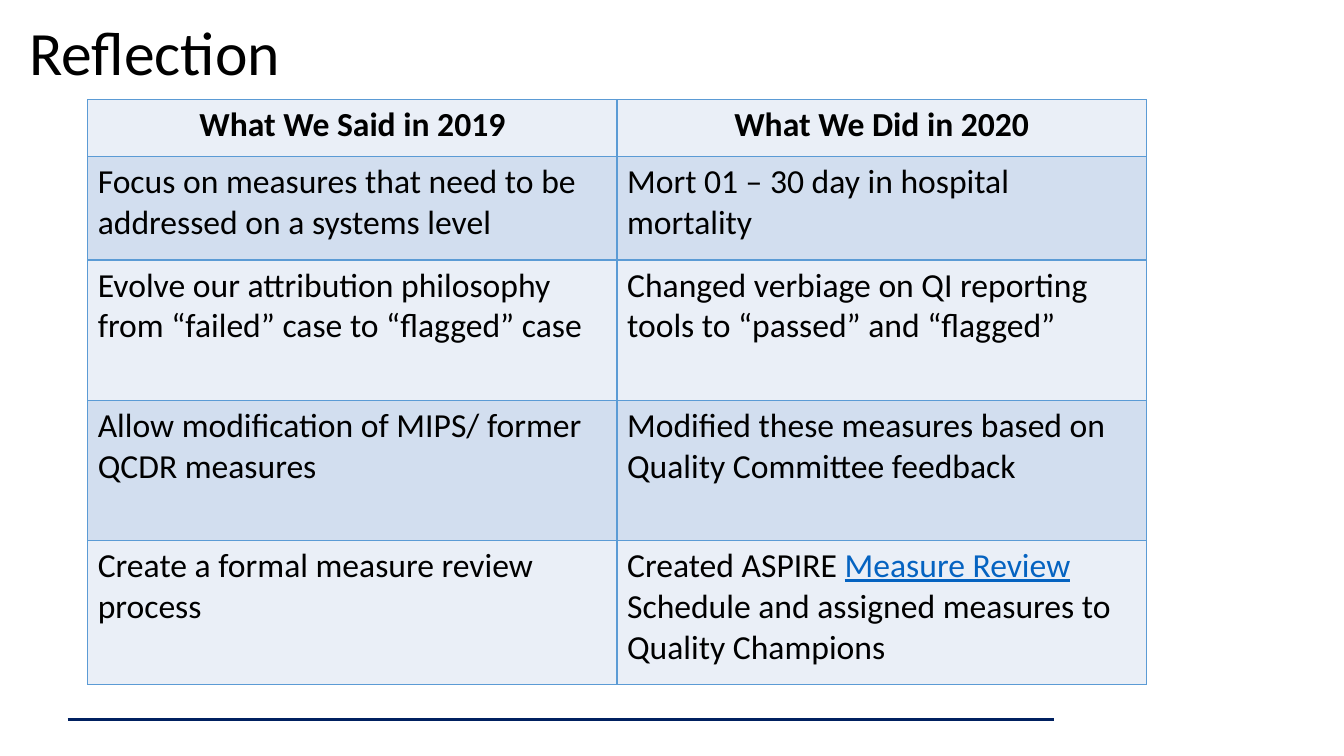
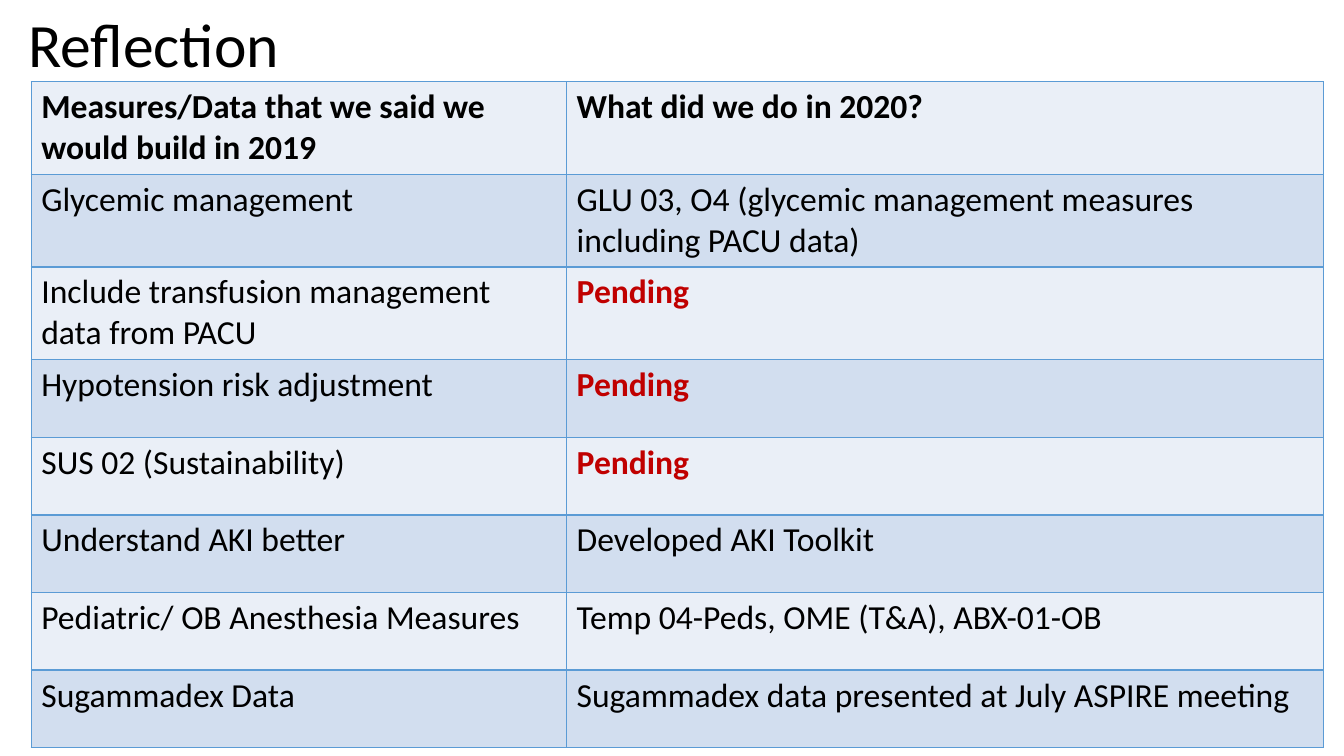
from lxml import etree
from pptx import Presentation
from pptx import util as u
from pptx.dml.color import RGBColor
from pptx.enum import shapes, text
from pptx.oxml import ns

FONT = "Calibri"
BLACK, NAVY, LINK, RED = "000000", "002060", "0563C1", "C00000"
BORDER = "5B9BD5"
BANDS = ("EAEFF7", "D2DEEF")
PENDING = [("Pending", {"color": RED, "bold": True})]

REFLECTION_ROWS = [
    ("What We Said in 2019", "What We Did in 2020"),
    ("Focus on measures that need to be addressed on a systems level",
     "Mort 01 – 30 day in hospital mortality"),
    ("Evolve our attribution philosophy from “failed” case to “flagged” case",
     "Changed verbiage on QI reporting tools to “passed” and “flagged”"),
    ("Allow modification of MIPS/ former QCDR measures",
     "Modified these measures based on Quality Committee feedback"),
    ("Create a formal measure review process",
     [("Created ASPIRE ", {}),
      ("Measure Review ", {"color": LINK, "underline": True}),
      ("Schedule and assigned measures to Quality Champions", {})]),
]
MEASURE_ROWS = [
    ("Measures/Data that we said we would build in 2019", "What did we do in 2020?"),
    ("Glycemic management",
     "GLU 03, O4 (glycemic management measures including PACU data)"),
    ("Include transfusion management data from PACU", PENDING),
    ("Hypotension risk adjustment", PENDING),
    ("SUS 02 (Sustainability)", PENDING),
    ("Understand AKI better", "Developed AKI Toolkit"),
    ("Pediatric/ OB Anesthesia Measures", "Temp 04-Peds, OME (T&A), ABX-01-OB"),
    ("Sugammadex Data", "Sugammadex data presented at July ASPIRE meeting"),
]


def rgb(value):
    return RGBColor.from_string(value)


def add_run(paragraph, words, size, color=BLACK, bold=False, underline=False):
    run = paragraph.add_run()
    run.text = words
    font = run.font
    font.name, font.size = FONT, u.Pt(size)
    font.bold, font.underline = bold, underline
    font.color.rgb = rgb(color)


def add_footer_rule(slide, layout):
    """Draw the rule and hand it to the layout, so every slide shows it."""
    rule = slide.shapes.add_connector(
        shapes.MSO_CONNECTOR.STRAIGHT,
        u.Inches(0.67), u.Inches(7.14), u.Inches(10.45), u.Inches(7.14))
    rule.line.color.rgb = rgb(NAVY)
    rule.line.width = u.Pt(2)
    etree.SubElement(rule.element.spPr, ns.qn("a:effectLst"))
    layout.shapes.element.append(rule.element)


def set_title(slide, words, box):
    title = slide.shapes.title
    title.left, title.top, title.width, title.height = map(u.Inches, box)
    frame = title.text_frame
    frame.word_wrap = True
    frame.auto_size = text.MSO_AUTO_SIZE.NONE
    frame.vertical_anchor = text.MSO_ANCHOR.MIDDLE
    paragraph = frame.paragraphs[0]
    paragraph.alignment = text.PP_ALIGN.LEFT
    paragraph.line_spacing = 0.9
    add_run(paragraph, words, 44)


def set_borders(cell):
    properties = cell._tc.get_or_add_tcPr()
    for index, side in enumerate(("lnL", "lnR", "lnT", "lnB")):
        line = etree.Element(ns.qn(f"a:{side}"), w=str(u.Pt(1)))
        fill = etree.SubElement(line, ns.qn("a:solidFill"))
        etree.SubElement(fill, ns.qn("a:srgbClr"), val=BORDER)
        properties.insert(index, line)


def add_banded_table(slide, left, top, widths, heights, rows, header_alignment):
    frame = slide.shapes.add_table(
        len(rows), len(widths), u.Inches(left), u.Inches(top),
        u.Inches(sum(widths)), u.Inches(sum(heights)))
    table = frame.table
    table.first_row = table.horz_banding = False
    for column, width in zip(table.columns, widths):
        column.width = u.Inches(width)
    for row_index, (row, height, contents) in enumerate(zip(table.rows, heights, rows)):
        row.height = u.Inches(height)
        is_header = row_index == 0
        for cell, content in zip(row.cells, contents):
            cell.fill.solid()
            cell.fill.fore_color.rgb = rgb(BANDS[row_index % 2])
            set_borders(cell)
            paragraph = cell.text_frame.paragraphs[0]
            paragraph.alignment = header_alignment if is_header else text.PP_ALIGN.LEFT
            runs = [(content, {"bold": is_header})] if isinstance(content, str) else content
            for words, style in runs:
                add_run(paragraph, words, 24, **style)


def main():
    presentation = Presentation()
    presentation.slide_width = u.Inches(13.33)
    presentation.slide_height = u.Inches(7.5)
    layout = presentation.slide_layouts.get_by_name("Title Only")

    reflection = presentation.slides.add_slide(layout)
    add_footer_rule(reflection, layout)
    set_title(reflection, "Reflection", (0.19, 0.12, 11.5, 0.87))
    add_banded_table(reflection, 0.87, 0.99, [5.25] * 2, [0.56, 1.03, 1.39, 1.39, 1.43],
                     REFLECTION_ROWS, text.PP_ALIGN.CENTER)

    measures = presentation.slides.add_slide(layout)
    set_title(measures, "Reflection", (0.18, 0.06, 10.45, 0.82))
    add_banded_table(measures, 0.31, 0.81, [5.31, 7.51], [0.92] * 3 + [0.77] * 5,
                     MEASURE_ROWS, text.PP_ALIGN.LEFT)

    presentation.save("out.pptx")


if __name__ == "__main__":
    main()
